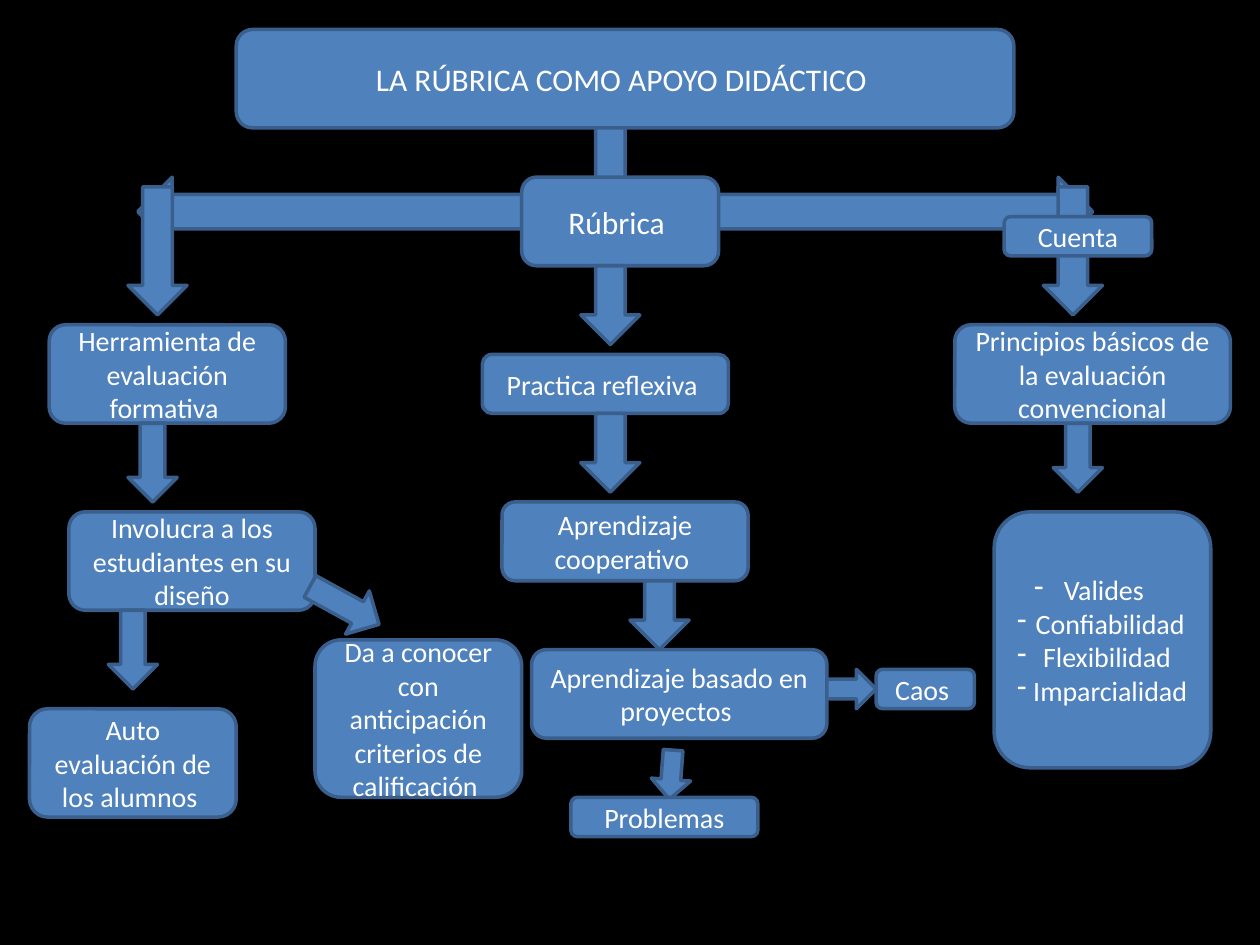
from lxml import etree
from pptx import Presentation
from pptx.dml.color import RGBColor
from pptx.enum.shapes import MSO_SHAPE
from pptx.enum.text import MSO_ANCHOR, PP_ALIGN
from pptx.oxml.ns import qn
from pptx.util import Cm, Pt

BOX = MSO_SHAPE.ROUNDED_RECTANGLE
DOWN = MSO_SHAPE.DOWN_ARROW
LEFT = MSO_SHAPE.LEFT_ARROW
MIDDLE = MSO_ANCHOR.MIDDLE
CENTER = PP_ALIGN.CENTER

BLACK = RGBColor(0x00, 0x00, 0x00)
WHITE = RGBColor(0xFF, 0xFF, 0xFF)
BLUE = RGBColor(0x4F, 0x81, 0xBD)
DARK_BLUE = RGBColor(0x3A, 0x5F, 0x8C)

# The slide is laid out on a grid of 128 by 96 squares
SQUARE = 25.4 / 128

deck = Presentation()
deck.slide_width = Cm(128 * SQUARE)
deck.slide_height = Cm(96 * SQUARE)
page = deck.slides.add_slide(deck.slide_layouts[6])
page.background.fill.solid()
page.background.fill.fore_color.rgb = BLACK


def add_part(kind, left, top, width, height, turn=0):
    part = page.shapes.add_shape(
        kind, *(Cm(squares * SQUARE) for squares in (left, top, width, height)))
    part.rotation = turn
    part.shadow.inherit = False
    part.fill.solid()
    part.fill.fore_color.rgb = BLUE
    part.line.color.rgb = DARK_BLUE
    part.line.width = Pt(2)
    return part


def add_box(left, top, width, height, text, size=16):
    box = add_part(BOX, left, top, width, height)
    frame = box.text_frame
    frame.word_wrap = True
    frame.vertical_anchor = MIDDLE
    frame.text = text
    for para in frame.paragraphs:
        para.alignment = CENTER
        for span in para.runs:
            span.font.name = "Calibri"
            span.font.size = Pt(size)
            span.font.color.rgb = WHITE
    return box


# Title and central idea, with arrows to the three branches
add_box(24, 3, 79, 10, "LA RÚBRICA COMO APOYO DIDÁCTICO ", 18)
add_part(DOWN, 59, 13, 6, 10)
add_part(LEFT, 14, 18, 49, 7)
add_part(LEFT, 62, 18, 49, 7, 180)
add_box(53, 18, 20, 9, "Rúbrica ", 18)

# Right branch: principles
add_part(DOWN, 106, 19, 6, 13)
add_box(102, 22, 15, 4, "Cuenta")
add_box(97, 33, 28, 10, "Principios básicos de la evaluación convencional")
add_part(DOWN, 107, 43, 5, 7)
principles = add_box(
    101, 52, 22, 26,
    "Valides \n Confiabilidad \n Flexibilidad \n Imparcialidad ")
for para in principles.text_frame.paragraphs:
    bullet = etree.SubElement(para._p.get_or_add_pPr(), qn("a:buChar"))
    bullet.set("char", "-")

# Middle branch: reflective practice
add_part(DOWN, 59, 27, 6, 8)
add_box(49, 36, 25, 6, "Practica reflexiva ")
add_part(DOWN, 59, 42, 6, 8)
add_box(51, 51, 25, 8, "Aprendizaje cooperativo ")
add_part(DOWN, 64, 59, 6, 7)
add_box(54, 66, 30, 9, "Aprendizaje basado en proyectos ")
add_part(LEFT, 65.7, 76.7, 5, 4, 274.3)
add_part(LEFT, 84, 68, 5, 4, 180)
add_box(89, 68, 10, 4, "Caos ")
add_box(58, 81, 19, 4, "Problemas")

# Left branch: formative assessment
add_part(DOWN, 13, 19, 6, 13)
add_box(5, 33, 24, 10, "Herramienta de evaluación formativa ")
add_part(DOWN, 13, 43, 5, 8)
add_box(7, 52, 25, 10, "Involucra a los estudiantes en su diseño")
add_part(DOWN, 11, 62, 5, 8)
add_part(DOWN, 32.5, 57.5, 5, 8, 298.8)
add_box(32, 65, 21, 16,
        "Da a conocer con anticipación criterios de calificación ")
add_box(3, 72, 21, 11, "Auto evaluación de los alumnos ")

deck.save("out.pptx")
